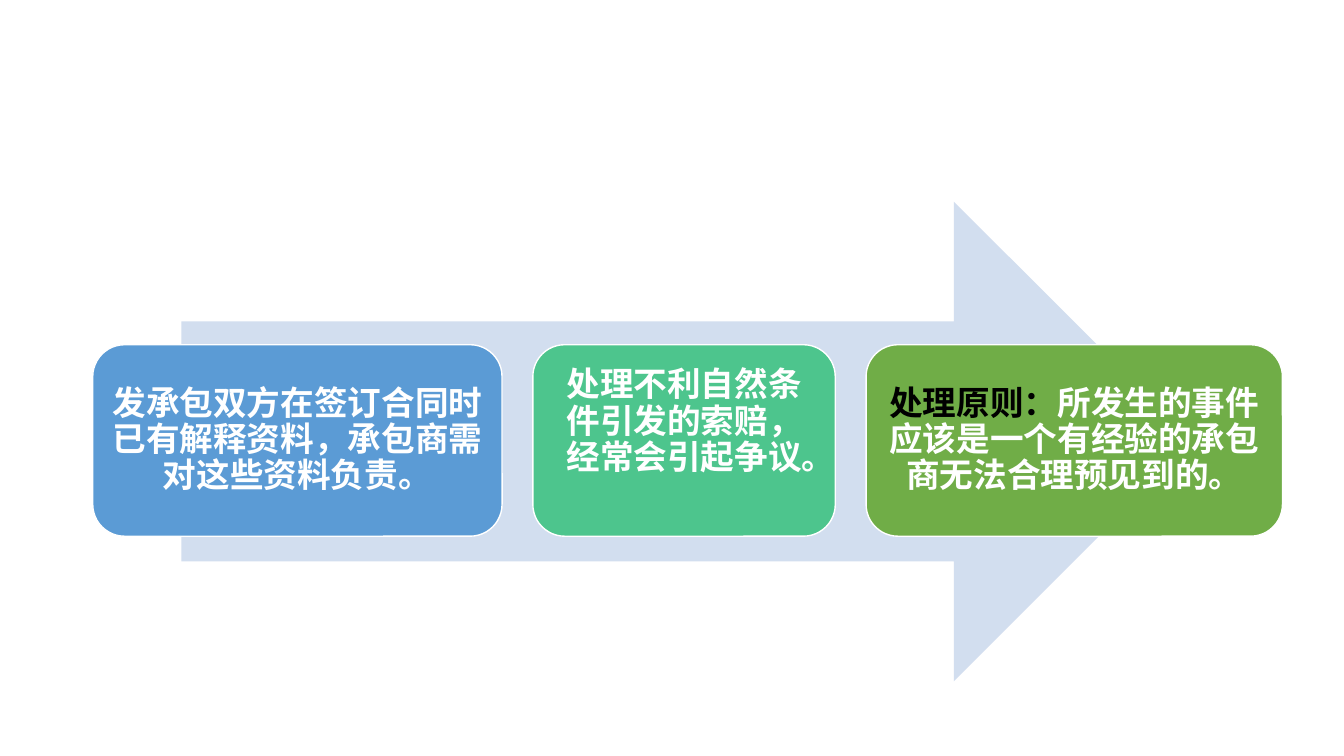
from lxml.etree import SubElement
from pptx import Presentation
from pptx.dml.color import RGBColor
from pptx.enum.shapes import MSO_SHAPE
from pptx.enum.text import MSO_ANCHOR, PP_ALIGN
from pptx.oxml.ns import qn
from pptx.util import Inches, Pt

FONT = "Noto Sans CJK SC"
CARD_TOP, CARD_HEIGHT, CARD_GAP = 3.42, 1.9, 0.305

# Width, fill and (text, colour) spans of each card. The second text ends in a
# space that wraps onto a line of its own and lifts the visible lines.
CARDS = [
    (4.06, "5B9BD5", [("发承包双方在签订合同时已有解释资料，承包商需对这些资料负责。", "FFFFFF")]),
    (3.0, "4DC58D", [("处理不利自然条件引发的索赔，经常会引起争议。 ", "FFFFFF")]),
    (4.13, "70AD47", [("处理原则：", "000000"),
                      ("所发生的事件应该是一个有经验的承包商无法合理预见到的。", "FFFFFF")]),
]


def add_filled_shape(kind, left, top, width, height, fill):
    shape = page.shapes.add_shape(
        kind, Inches(left), Inches(top), Inches(width), Inches(height))
    shape.shadow.inherit = False
    shape.fill.solid()
    shape.fill.fore_color.rgb = RGBColor.from_string(fill)
    shape.line.fill.background()
    return shape


def add_span(para, text, size=24, color="FFFFFF", bold=True):
    span = para.add_run()
    span.text = text
    span.font.name = FONT
    span.font.size = Pt(size)
    span.font.bold = bold
    span.font.color.rgb = RGBColor.from_string(color)
    SubElement(span.font._element, qn("a:ea"), typeface=FONT)


deck = Presentation()
deck.slide_width, deck.slide_height = Inches(13.33), Inches(7.5)
page = deck.slides.add_slide(deck.slide_layouts[6])

add_filled_shape(MSO_SHAPE.RIGHT_ARROW, 1.8, 2, 10.04, 4.76, "D2DEEF")

left = 0.92
for width, fill, spans in CARDS:
    card = add_filled_shape(MSO_SHAPE.ROUNDED_RECTANGLE, left, CARD_TOP,
                            width, CARD_HEIGHT, fill)
    card.line.color.rgb = RGBColor.from_string("FFFFFF")
    card.line.width = Pt(1)
    frame = card.text_frame
    frame.word_wrap = True
    frame.vertical_anchor = MSO_ANCHOR.MIDDLE
    frame.margin_left = frame.margin_right = Inches(0.1)
    frame.margin_top = frame.margin_bottom = Inches(0.1)
    para = frame.paragraphs[0]
    para.alignment = PP_ALIGN.CENTER
    para.line_spacing = 0.9
    for text, color in spans:
        add_span(para, text, color=color)
    left += width + CARD_GAP

deck.save("out.pptx")
